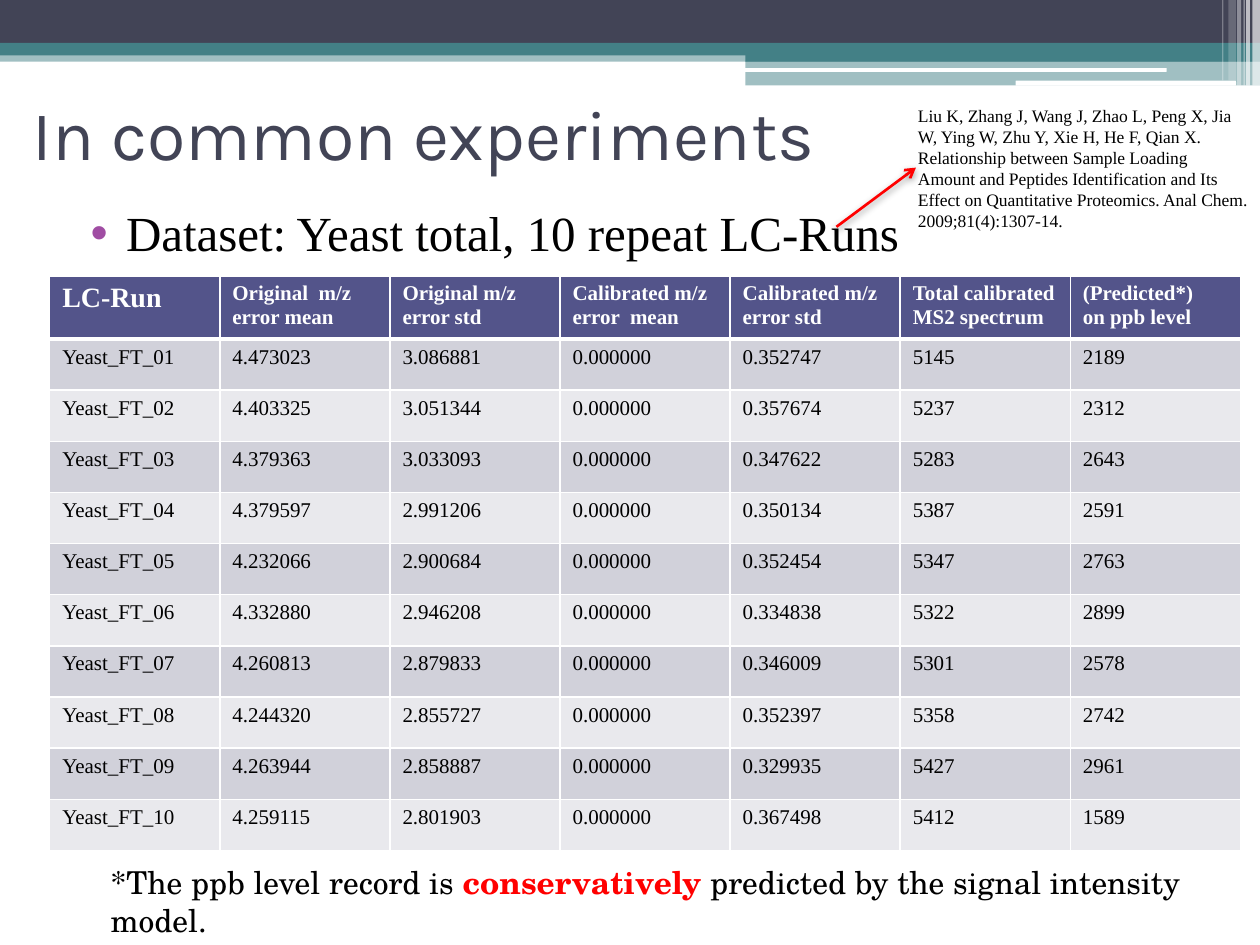
from lxml.etree import SubElement
from pptx import Presentation
from pptx.dml.color import RGBColor
from pptx.enum.shapes import MSO_CONNECTOR as Connector, MSO_SHAPE as Preset
from pptx.enum.text import MSO_ANCHOR as Anchor, MSO_AUTO_SIZE as AutoSize, PP_ALIGN as Align
from pptx.oxml import parse_xml
from pptx.oxml.ns import nsdecls, qn
from pptx.util import Pt

WHITE = RGBColor(0xFF, 0xFF, 0xFF)
BLACK = RGBColor(0, 0, 0)
RED = RGBColor(0xFF, 0, 0)
SLATE = RGBColor(0x42, 0x44, 0x56)
TEAL = RGBColor(0x43, 0x80, 0x86)
PURPLE = RGBColor(0xA0, 0x4D, 0xA3)
HEADER = RGBColor(0x53, 0x54, 0x8A)
BANDS = RGBColor(0xD1, 0xD1, 0xDA), RGBColor(0xE9, 0xE9, 0xED)

SERIF = "Times New Roman"
CITATION = (
    "Liu K, Zhang J, Wang J, Zhao L, Peng X, Jia W, Ying W, Zhu Y, Xie H, He F, Qian X. "
    "Relationship between Sample Loading Amount and Peptides Identification and Its "
    "Effect on Quantitative Proteomics. Anal Chem. 2009;81(4):1307-14."
)
HEADINGS = [
    "LC-Run",
    "Original  m/z error mean",
    "Original m/z error std",
    "Calibrated m/z error  mean",
    "Calibrated m/z error std",
    "Total calibrated MS2 spectrum",
    "(Predicted*)\non ppb level",
]
RUNS = [
    ("4.473023", "3.086881", "0.352747", "5145", "2189"),
    ("4.403325", "3.051344", "0.357674", "5237", "2312"),
    ("4.379363", "3.033093", "0.347622", "5283", "2643"),
    ("4.379597", "2.991206", "0.350134", "5387", "2591"),
    ("4.232066", "2.900684", "0.352454", "5347", "2763"),
    ("4.332880", "2.946208", "0.334838", "5322", "2899"),
    ("4.260813", "2.879833", "0.346009", "5301", "2578"),
    ("4.244320", "2.855727", "0.352397", "5358", "2742"),
    ("4.263944", "2.858887", "0.329935", "5427", "2961"),
    ("4.259115", "2.801903", "0.367498", "5412", "1589"),
]
CALIBRATED_MEAN = "0.000000"

BANNER = [
    (0, 28.8, 720, 6.5, TEAL, 50),
    (0, 0, 720, 24.5, SLATE, 100),
    (0, 24.5, 720, 7.2, TEAL, 100),
    (426, 28.1, 294, 7.2, TEAL, 100),
    (426, 34.6, 294, 14.2, TEAL, 50),
]
BANNER_LINES = [(425.5, 38.9, 241.2, 2.2), (580.3, 46.1, 126, 2.9)]
STRIPES = [
    (715.7, 4.3, 49, 65),
    (712.1, 2.2, 49, 65),
    (710.6, 0.7, 49, 60),
    (707, 2.2, 49, 40),
    (702, 4.3, 46, 20),
    (698.4, 0.7, 46, 30),
]


def add_block(slide, left, top, width, height, color, opacity=100, preset=Preset.RECTANGLE):
    shape = slide.shapes.add_shape(preset, Pt(left), Pt(top), Pt(width), Pt(height))
    shape.shadow.inherit = False
    shape.line.fill.background()
    shape.fill.solid()
    shape.fill.fore_color.rgb = color
    if opacity < 100:
        tint = shape.fill._xPr.find(qn("a:solidFill"))[0]
        SubElement(tint, qn("a:alpha")).set("val", str(opacity * 1000))


def add_run(paragraph, text, size, font=SERIF, color=BLACK, bold=False):
    run = paragraph.add_run()
    run.text = text
    run.font.size = Pt(size)
    run.font.name = font
    run.font.color.rgb = color
    run.font.bold = bold


def place(shape, left, top, width, height):
    shape.left, shape.top, shape.width, shape.height = map(Pt, (left, top, width, height))


def add_banner(slide):
    for block in BANNER:
        add_block(slide, *block)
    for line in BANNER_LINES:
        add_block(slide, *line, WHITE, preset=Preset.ROUNDED_RECTANGLE)
    for left, width, height, opacity in STRIPES:
        add_block(slide, left, 0, width, height, WHITE, opacity)


def fill_title(title, text):
    place(title, 11.5, 33.8, 648, 84.2)
    title.text_frame.auto_size = AutoSize.NONE
    title.text_frame.vertical_anchor = Anchor.MIDDLE
    paragraph = title.text_frame.paragraphs[0]
    paragraph.alignment = Align.LEFT
    add_run(paragraph, text, 40, "Karla", SLATE)


def fill_body(body, text):
    place(body, 36, 112.3, 648, 405.4)
    body.text_frame.auto_size = AutoSize.NONE
    paragraph = body.text_frame.paragraphs[0]
    paragraph.space_before = Pt(3)
    properties = paragraph._p.get_or_add_pPr()
    properties.set("marL", str(Pt(28.8)))
    properties.set("indent", str(Pt(-20.2)))
    color = SubElement(properties, qn("a:buClr"))
    SubElement(color, qn("a:srgbClr")).set("val", str(PURPLE))
    SubElement(properties, qn("a:buFont")).set("typeface", "Arial")
    SubElement(properties, qn("a:buChar")).set("char", "•")
    add_run(paragraph, text, 28)


def add_text_box(slide, left, top, width, height):
    box = slide.shapes.add_textbox(Pt(left), Pt(top), Pt(width), Pt(height))
    box.text_frame.word_wrap = True
    return box.text_frame.paragraphs[0]


def add_arrow(slide, start, end):
    arrow = slide.shapes.add_connector(Connector.STRAIGHT, *map(Pt, start + end))
    arrow.line.color.rgb = RED
    arrow.line.width = Pt(1.5)
    SubElement(arrow.line._get_or_add_ln(), qn("a:tailEnd")).set("type", "arrow")
    arrow._element.spPr.append(parse_xml(
        f'<a:effectLst {nsdecls("a")}><a:outerShdw blurRad="{Pt(4.1)}" dist="{Pt(2)}" '
        'dir="5400000" rotWithShape="0"><a:srgbClr val="000000"><a:alpha val="40000"/>'
        '</a:srgbClr></a:outerShdw></a:effectLst>'
    ))


def set_borders(cell, top, bottom):
    properties = cell._tc.get_or_add_tcPr()
    widths = {"lnL": 1, "lnR": 1, "lnT": top, "lnB": bottom}
    for index, (side, width) in enumerate(widths.items()):
        properties.insert(index, parse_xml(
            f'<a:{side} {nsdecls("a")} w="{Pt(width)}"><a:solidFill>'
            f'<a:srgbClr val="{WHITE}"/></a:solidFill></a:{side}>'
        ))


def fill_cell(cell, text, fill, size=12, color=BLACK, bold=False, top=1, bottom=1):
    cell.fill.solid()
    cell.fill.fore_color.rgb = fill
    set_borders(cell, top, bottom)
    frame = cell.text_frame
    for index, line in enumerate(text.split("\n")):
        paragraph = frame.add_paragraph() if index else frame.paragraphs[0]
        add_run(paragraph, line, size, color=color, bold=bold)


def add_run_table(slide):
    table = slide.shapes.add_table(
        len(RUNS) + 1, len(HEADINGS), Pt(28.4), Pt(157.7), Pt(680.4), Pt(327.5)
    ).table
    for column in table.columns:
        column.width = Pt(97.2)
    for index, row in enumerate(table.rows):
        row.height = Pt(29.25 if index else 35)
    for column, heading in enumerate(HEADINGS):
        size = 12 if column else 16
        fill_cell(table.cell(0, column), heading, HEADER, size, WHITE, True, bottom=3)
    for row, (mean, deviation, *results) in enumerate(RUNS, 1):
        values = [f"Yeast_FT_{row:02}", mean, deviation, CALIBRATED_MEAN, *results]
        for column, value in enumerate(values):
            fill_cell(table.cell(row, column), value, BANDS[(row - 1) % 2],
                      top=3 if row == 1 else 1)


def add_footnote(slide):
    paragraph = add_text_box(slide, 56.2, 489.6, 665.3, 28.8)
    font = "TeX Gyre Schola"
    add_run(paragraph, "*The ppb level record is ", 18, font)
    add_run(paragraph, "conservatively", 18, font, RED, True)
    add_run(paragraph, " predicted by the signal intensity model.", 18, font)


def main():
    presentation = Presentation()
    presentation.slide_width, presentation.slide_height = Pt(720), Pt(540)
    slide = presentation.slides.add_slide(presentation.slide_layouts[1])
    add_banner(slide)
    fill_title(slide.shapes.title, "In common experiments")
    fill_body(slide.placeholders[1], "Dataset: Yeast total, 10 repeat LC-Runs")
    add_run(add_text_box(slide, 517.5, 56.2, 202.5, 79.9), CITATION, 10)
    add_arrow(slide, (478, 129.6), (523.4, 95.8))
    add_run_table(slide)
    add_footnote(slide)
    presentation.save("out.pptx")


if __name__ == "__main__":
    main()
